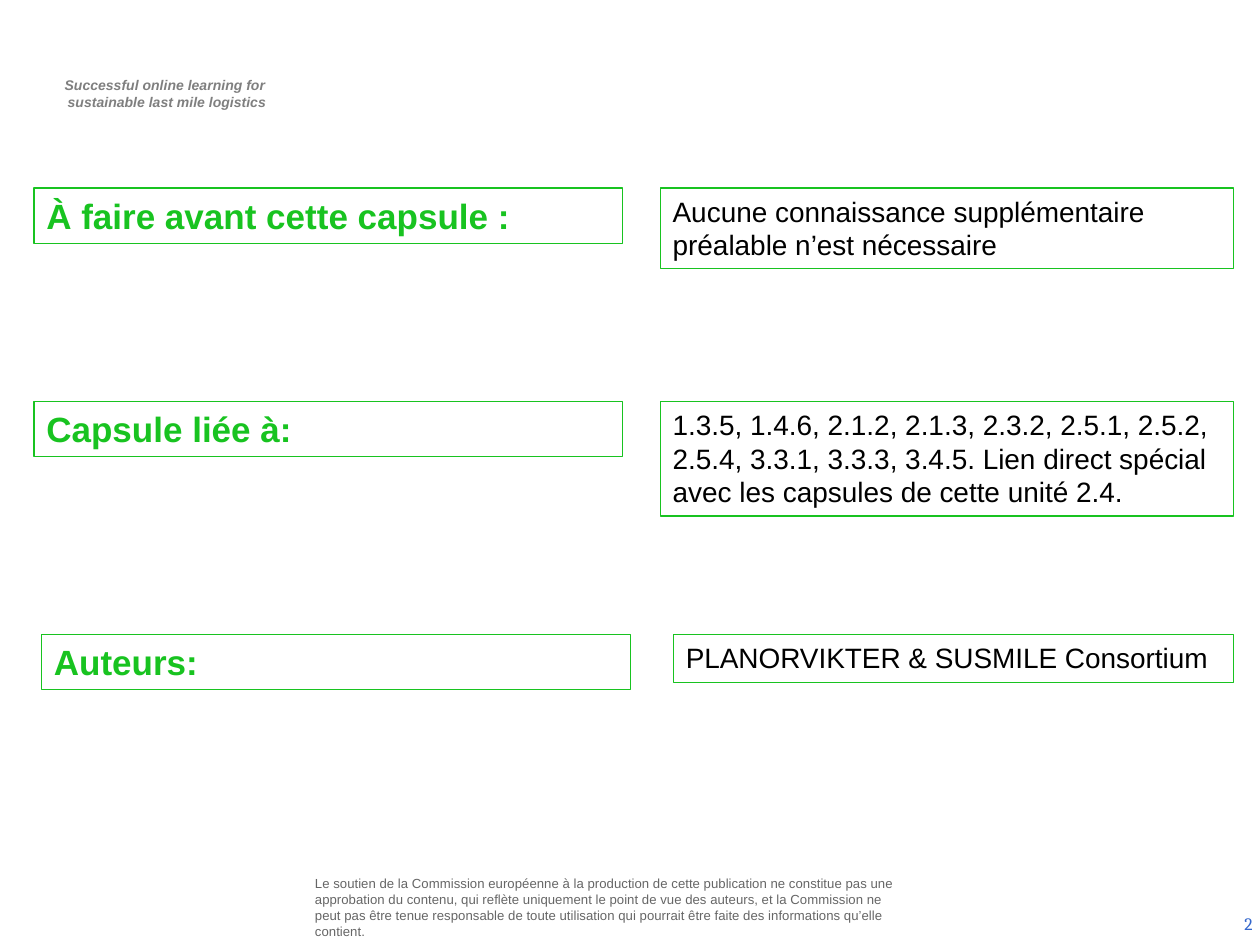
import pptx
import pptx.dml.color
import pptx.enum.shapes
import pptx.enum.text
import pptx.util

Pt = pptx.util.Pt
ALIGN = pptx.enum.text.PP_ALIGN
ANCHOR = pptx.enum.text.MSO_ANCHOR
COLORS = {
    "green": "18C320",
    "white": "FFFFFF",
    "black": "000000",
    "header": "7F7F7F",
    "disclaimer": "666666",
    "number": "3366CC",
}


def color(name):
    return pptx.dml.color.RGBColor.from_string(COLORS[name])


def write(shape, lines, size, color_name, bold=False, italic=False, font="Arial",
          align=ALIGN.LEFT, anchor=ANCHOR.TOP, margins=(7.2, 3.6, 7.2, 3.6)):
    frame = shape.text_frame
    frame.word_wrap = True
    frame.vertical_anchor = anchor
    frame.margin_left, frame.margin_top, frame.margin_right, frame.margin_bottom = map(Pt, margins)
    frame.text = "\n".join(lines)
    for paragraph in frame.paragraphs:
        paragraph.alignment = align
        paragraph.font.name = font
        paragraph.font.size = Pt(size)
        paragraph.font.bold = bold
        paragraph.font.italic = italic
        paragraph.font.color.rgb = color(color_name)


presentation = pptx.Presentation()
presentation.slide_width = Pt(720)
presentation.slide_height = Pt(540)
slide = presentation.slides.add_slide(presentation.slide_layouts[6])

header = slide.shapes.add_textbox(Pt(20.9), Pt(40.3), Pt(146.2), Pt(26.6))
write(header, ["Successful online learning for ", "sustainable last mile logistics"], 8, "header",
      bold=True, italic=True, align=ALIGN.CENTER, margins=(10, 3.6, 7.2, 3.6))

disclaimer = slide.shapes.add_textbox(Pt(177.1), Pt(500.4), Pt(340.6), Pt(36))
write(disclaimer, [
    "Le soutien de la Commission européenne à la production de cette publication ne constitue pas une "
    "approbation du contenu, qui reflète uniquement le point de vue des auteurs, et la Commission ne "
    "peut pas être tenue responsable de toute utilisation qui pourrait être faite des informations "
    "qu’elle contient."
], 7.5, "disclaimer", anchor=ANCHOR.MIDDLE, margins=(2.9, 2.9, 2.9, 2.9))

slide_number = slide.shapes.add_textbox(Pt(555.1), Pt(513.4), Pt(167.8), Pt(28.8))
write(slide_number, ["2"], 10, "number", font="Cambria", align=ALIGN.RIGHT, anchor=ANCHOR.MIDDLE)

right_edge = 705
rows = [
    (107.5, 19.4, "À faire avant cette capsule :", 377.3, 45.9,
     "Aucune connaissance supplémentaire préalable n’est nécessaire"),
    (229.4, 19.4, "Capsule liée à:", 377.3, 65.5,
     "1.3.5, 1.4.6, 2.1.2, 2.1.3, 2.3.2, 2.5.1, 2.5.2, 2.5.4, 3.3.1, 3.3.3, 3.4.5. "
     "Lien direct spécial avec les capsules de cette unité 2.4."),
    (362.6, 23.7, "Auteurs:", 384.8, 27.4, "PLANORVIKTER & SUSMILE Consortium"),
]
for top, label_left, label, detail_left, detail_height, detail in rows:
    for left, width, height, text, size, color_name, bold in [
        (label_left, 336.5, 31.5, label, 20, "green", True),
        (detail_left, right_edge - detail_left, detail_height, detail, 16, "black", False),
    ]:
        box = slide.shapes.add_shape(pptx.enum.shapes.MSO_SHAPE.RECTANGLE,
                                     Pt(left), Pt(top), Pt(width), Pt(height))
        box.shadow.inherit = False
        box.fill.solid()
        box.fill.fore_color.rgb = color("white")
        box.line.color.rgb = color("green")
        box.line.width = Pt(0.75)
        write(box, [text], size, color_name, bold=bold)

presentation.save("out.pptx")
